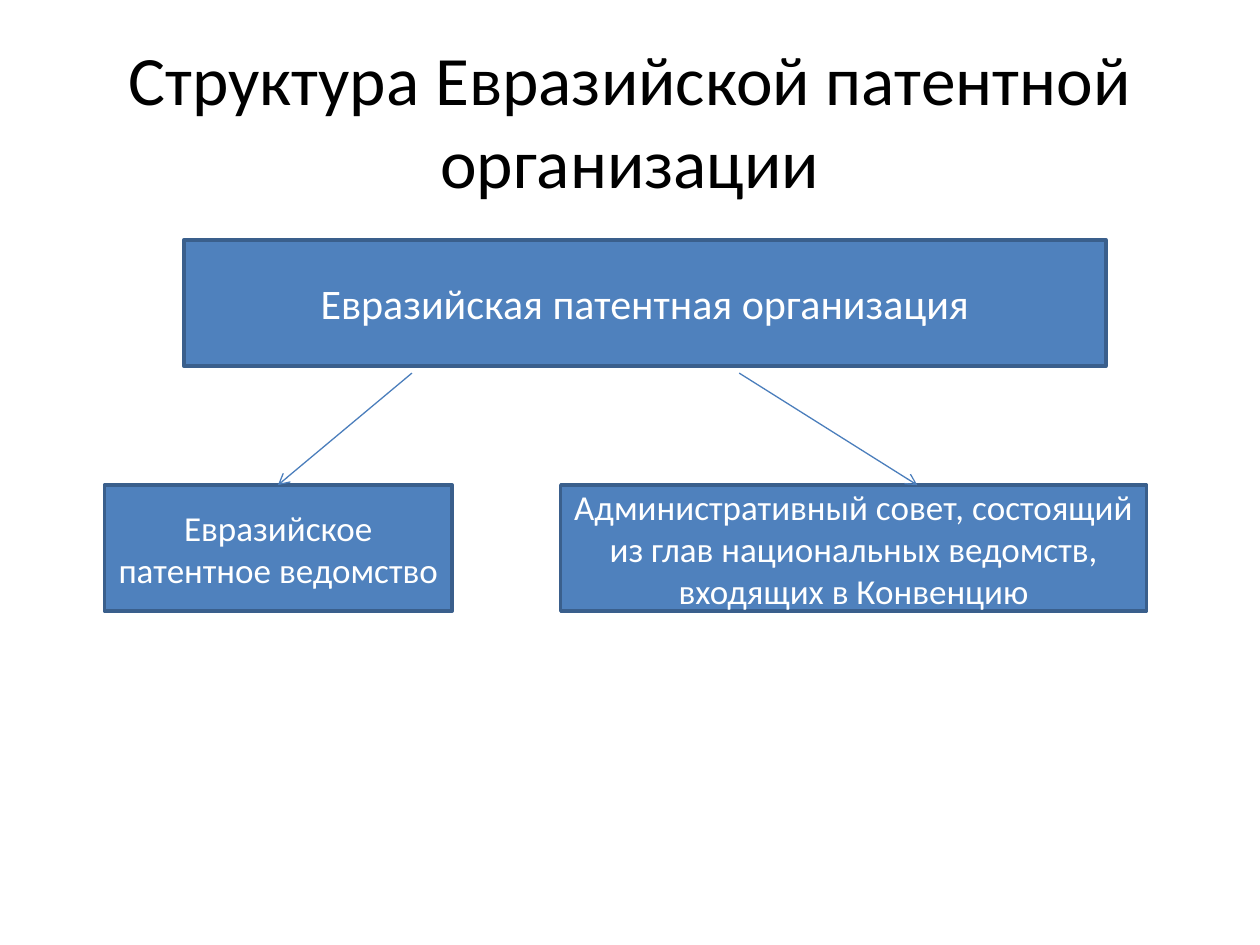
import pptx
import pptx.dml.color
import pptx.enum.shapes
import pptx.enum.text
import pptx.oxml
import pptx.oxml.ns
import pptx.util

Pt = pptx.util.Pt
COLORS = {"title": "000000", "box": "4F81BD", "border": "3A5F8C",
          "label": "FFFFFF", "arrow": "4B7EBC"}


def rgb(name):
    return pptx.dml.color.RGBColor.from_string(COLORS[name])


class SlideBuilder:
    font_name = "Calibri"
    border_width = 2
    arrow_width = 0.75

    def __init__(self, slide):
        self.slide = slide

    def set_text(self, shape, text, size, color):
        frame = shape.text_frame
        frame.word_wrap = True
        frame.vertical_anchor = pptx.enum.text.MSO_ANCHOR.MIDDLE
        paragraph = frame.paragraphs[0]
        paragraph.alignment = pptx.enum.text.PP_ALIGN.CENTER
        run = paragraph.add_run()
        run.text = text
        formats = {"name": self.font_name, "size": Pt(size)}
        for attribute, value in formats.items():
            setattr(run.font, attribute, value)
        run.font.color.rgb = rgb(color)

    def title(self, text, bounds, size):
        shape = self.slide.shapes.add_textbox(*map(Pt, bounds))
        self.set_text(shape, text, size, "title")

    def box(self, text, bounds, size):
        shape = self.slide.shapes.add_shape(
            pptx.enum.shapes.MSO_SHAPE.RECTANGLE, *map(Pt, bounds))
        shape.shadow.inherit = False
        shape.fill.solid()
        shape.fill.fore_color.rgb = rgb("box")
        shape.line.color.rgb = rgb("border")
        shape.line.width = Pt(self.border_width)
        self.set_text(shape, text, size, "label")

    def arrow(self, start, end):
        connector = self.slide.shapes.add_connector(
            pptx.enum.shapes.MSO_CONNECTOR.STRAIGHT, *map(Pt, start + end))
        connector.line.color.rgb = rgb("arrow")
        connector.line.width = Pt(self.arrow_width)
        namespace = pptx.oxml.ns.nsdecls("a")
        outline = connector.line._get_or_add_ln()
        outline.append(pptx.oxml.parse_xml(
            f'<a:tailEnd {namespace} type="arrow"/>'))
        outline.addnext(pptx.oxml.parse_xml(f'<a:effectLst {namespace}/>'))


def main():
    presentation = pptx.Presentation()
    presentation.slide_width = Pt(720)
    presentation.slide_height = Pt(540)
    builder = SlideBuilder(
        presentation.slides.add_slide(presentation.slide_layouts[6]))

    box_height = 72
    parent_top = 137.2
    child_top = 277.2
    arrow_top = 213.2

    builder.title("Структура Евразийской патентной организации",
                  (36, 23, 648, 90), 39.6)
    builder.box("Евразийская патентная организация",
                (105, parent_top, 527, box_height), 24)

    children = [
        ("Евразийское патентное ведомство", 59.6, 198.8, 235.4, 158.8),
        ("Административный совет, состоящий из глав национальных ведомств, "
         "входящих в Конвенцию", 320.4, 334.8, 422.4, 524.2),
    ]
    for text, left, width, arrow_start, arrow_end in children:
        builder.box(text, (left, child_top, width, box_height), 20)
        builder.arrow((arrow_start, arrow_top), (arrow_end, child_top))

    presentation.save("out.pptx")


if __name__ == "__main__":
    main()
